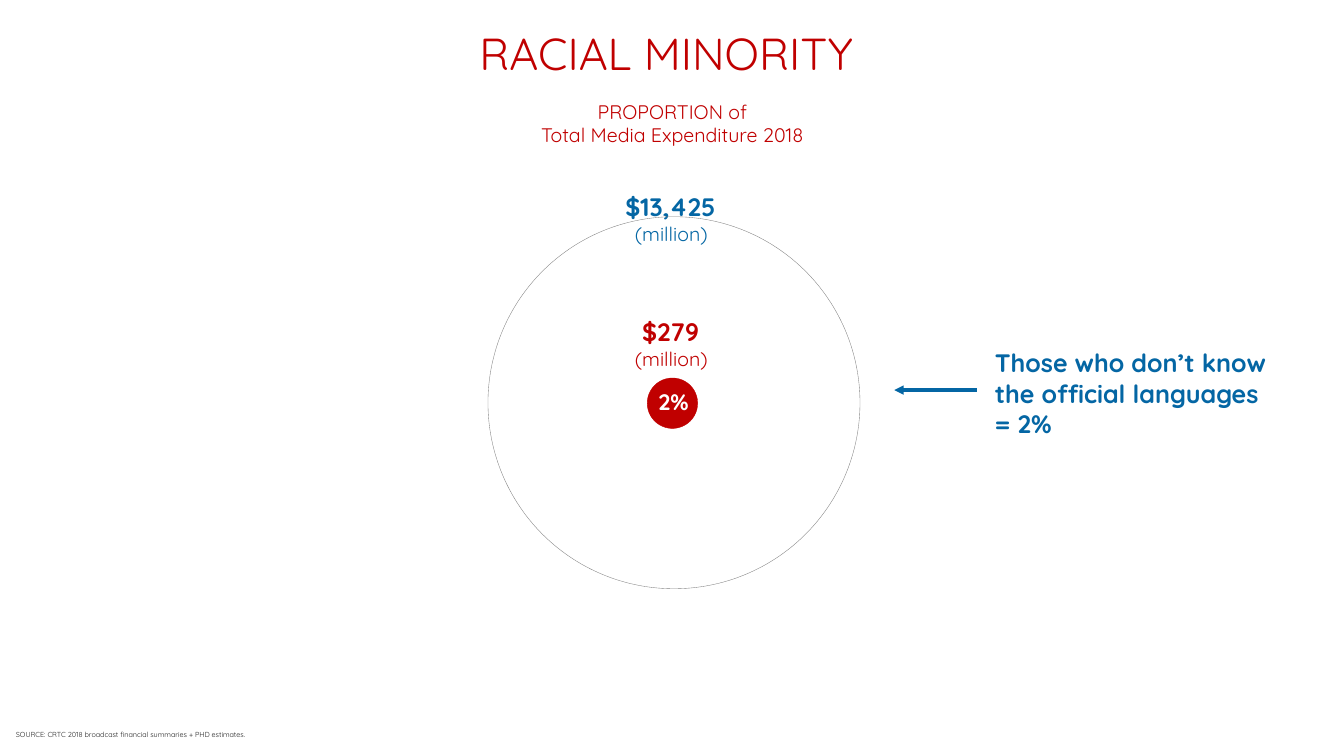
from lxml import etree
from pptx import Presentation, util as u
from pptx.dml.color import RGBColor
from pptx.enum import shapes, text
from pptx.oxml.ns import qn

WIDTH, HEIGHT = u.Inches(13.33), u.Inches(7.5)
FONT = "Quicksand"
RED, BLUE, GREY, WHITE, INK = "C00000", "0466A4", "808080", "FFFFFF", "222222"
LEFT, CENTER = text.PP_ALIGN.LEFT, text.PP_ALIGN.CENTER


def rgb(code):
    """Turn a hex string into a colour."""
    return RGBColor.from_string(code)


def share(x, y):
    """Convert percentages of the slide's width and height to lengths."""
    return int(WIDTH * x / 100), int(HEIGHT * y / 100)


def place(sp, x, y, w, h):
    """Position a shape by percentages of the slide."""
    sp.left, sp.top = share(x, y)
    sp.width, sp.height = share(w, h)


def write(sp, lines, color, align=CENTER, wrap=True):
    """Fill a shape with lines of (text, size, bold)."""
    tf = sp.text_frame
    tf.word_wrap = wrap
    tf.auto_size = text.MSO_AUTO_SIZE.NONE
    tf.vertical_anchor = text.MSO_ANCHOR.TOP
    for i, (line, size, bold) in enumerate(lines):
        p = tf.add_paragraph() if i else tf.paragraphs[0]
        p.text = line
        p.alignment = align
        p.font.name, p.font.size, p.font.bold = FONT, u.Pt(size), bold
        p.font.color.rgb = rgb(color)


def add_label(s, box, lines, color, **options):
    """Add a text box and return it."""
    sp = s.shapes.add_textbox(0, 0, 0, 0)
    place(sp, *box)
    write(sp, lines, color, **options)
    return sp


def add_amount(s, box, amount, color):
    """Add a bold amount above its unit."""
    add_label(s, box, [(amount, 18, True), ("(million) ", 14, False)], color, wrap=False)


def add_circle(s, box, line, fill=None):
    """Add a thinly outlined circle, filled if a fill is given."""
    sp = s.shapes.add_shape(shapes.MSO_SHAPE.OVAL, 0, 0, 0, 0)
    place(sp, *box)
    sp.shadow.inherit = False
    sp.line.color.rgb, sp.line.width = rgb(line), u.Pt(0.25)
    if fill:
        sp.fill.solid()
        sp.fill.fore_color.rgb = rgb(fill)
    else:
        sp.fill.background()


def add_arrow(s, start, end, color):
    """Add a straight arrow pointing at its end."""
    sp = s.shapes.add_connector(shapes.MSO_CONNECTOR.STRAIGHT, *share(*start), *share(*end))
    sp.line.color.rgb, sp.line.width = rgb(color), u.Pt(2.25)
    etree.SubElement(sp.line._get_or_add_ln(), qn("a:tailEnd"), type="triangle")
    etree.SubElement(sp._element.spPr, qn("a:effectLst"))


def main():
    """Build the slide."""
    prs = Presentation()
    prs.slide_width, prs.slide_height = WIDTH, HEIGHT
    s = prs.slides.add_slide(prs.slide_layouts[5])

    title = s.shapes.title
    place(title, 29.63, 2.67, 40.81, 8.53)
    write(title, [("RACIAL MINORITY ", 32, False)], RED)
    add_label(s, (37.88, 12.53, 24.31, 7.6),
              [("PROPORTION of", 14, False), ("Total Media Expenditure 2018", 14, False)], RED)

    add_amount(s, (45.69, 24.67, 8.93, 8.53), "$13,425 ", BLUE)
    add_circle(s, (36.31, 28.67, 27.68, 49.2), GREY)
    add_circle(s, (48.16, 50, 3.75, 6.67), RED, RED)
    add_amount(s, (46.44, 41.2, 7.43, 8.53), "$279 ", RED)
    add_label(s, (48.16, 50.67, 3.9, 4.93), [("2%", 16, True)], WHITE, wrap=False)

    add_label(s, (73.29, 45.33, 23.18, 13.47),
              [("Those who don’t know the official languages", 18, True), ("= 2%", 18, True)],
              BLUE, align=LEFT)
    add_arrow(s, (72.69, 51.6), (66.54, 51.6), BLUE)

    source = add_label(s, (0.45, 95.73, 25.28, 3.33),
                       [("SOURCE: CRTC 2018 broadcast financial summaries + PHD estimates.", 9, False)],
                       INK, align=LEFT)
    r = source.text_frame.paragraphs[0].runs[0]
    r.font._element.set("baseline", "30000")
    prs.save("out.pptx")


if __name__ == "__main__":
    main()
